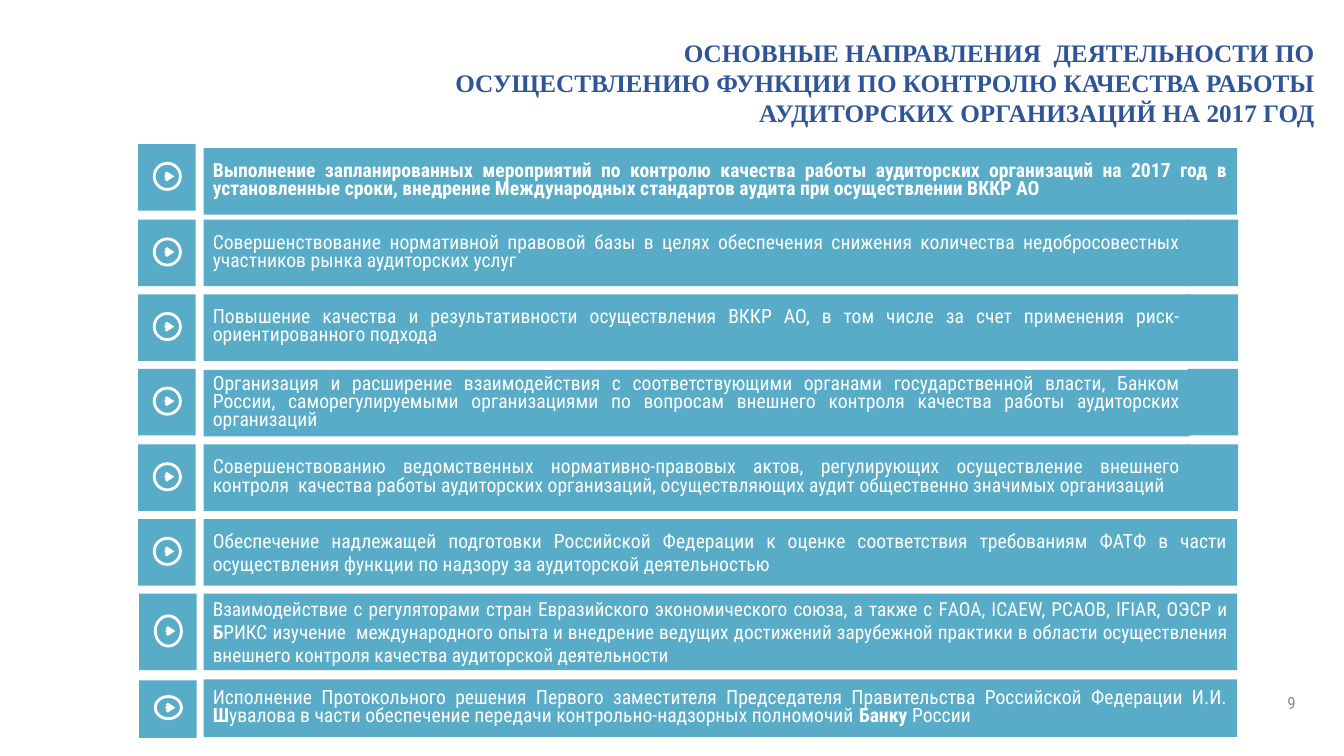
from lxml.etree import SubElement
from pptx import Presentation
from pptx.dml.color import RGBColor
from pptx.enum.shapes import MSO_CONNECTOR, MSO_SHAPE
from pptx.enum.text import MSO_ANCHOR, MSO_AUTO_SIZE, PP_ALIGN
from pptx.oxml.ns import qn
from pptx.util import Pt

PX = 9144  # 100 px to the inch
THEME = {
    "bar": RGBColor(0x58, 0xAC, 0xC8),
    "light": RGBColor(0xFF, 0xFF, 0xFF),
    "title": {"name": "Times New Roman", "size": Pt(18), "bold": True},
    "title_color": RGBColor(0x2F, 0x55, 0x97),
    "body": {"name": "Roboto Condensed", "size": Pt(14)},
    "dense": {"name": "Roboto Condensed", "size": Pt(13.8)},
    "number": {"name": "Roboto Condensed", "size": Pt(12)},
    "number_color": RGBColor(0x8C, 0x8C, 0x8C),
}
FRAME = {"word_wrap": True, "margin_left": 9 * PX, "margin_right": 9 * PX,
         "margin_top": 4 * PX, "margin_bottom": 4 * PX}


def add_block(shapes, kind, left, top, width, height, fill=None):
    """Add a preset shape: a filled one without outline, or a white outline."""
    block = shapes.add_shape(kind, left * PX, top * PX, width * PX, height * PX)
    block.shadow.inherit = False
    if fill is None:
        block.fill.background()
        block.line.color.rgb = THEME["light"]
        block.line.width = Pt(2)
    else:
        block.fill.solid()
        block.fill.fore_color.rgb = fill
        block.line.fill.background()
    return block


def write(box, spans, style, color, align, anchor, spacing=None):
    """Fill a box with one paragraph of (text, bold) spans."""
    frame = box.text_frame
    for name, value in {**FRAME, "vertical_anchor": anchor}.items():
        setattr(frame, name, value)
    para = frame.paragraphs[0]
    para.alignment = align
    if spacing:
        para.line_spacing = spacing
    for text, bold in spans:
        span = para.add_run()
        span.text = text
        for name, value in {"bold": bold, **style}.items():
            setattr(span.font, name, value)
        span.font.color.rgb = color


deck = Presentation()
deck.slide_width, deck.slide_height = 1333 * PX, 750 * PX
page = deck.slides.add_slide(deck.slide_layouts[5])

# Title
title = page.shapes.title
for name, value in {"left": 418, "top": 33, "width": 895, "height": 130}.items():
    setattr(title, name, value * PX)
write(title, [("ОСНОВНЫЕ НАПРАВЛЕНИЯ  ДЕЯТЕЛЬНОСТИ ПО ОСУЩЕСТВЛЕНИЮ ФУНКЦИИ ПО КОНТРОЛЮ "
               "КАЧЕСТВА РАБОТЫ АУДИТОРСКИХ ОРГАНИЗАЦИЙ НА 2017 ГОД", True)],
      THEME["title"], THEME["title_color"], PP_ALIGN.RIGHT, MSO_ANCHOR.TOP)
title.text_frame.auto_size = MSO_AUTO_SIZE.NONE

# Page number
number = page.shapes.add_textbox(1253 * PX, 678 * PX, 41 * PX, 39 * PX)
write(number, [("9", False)], THEME["number"], THEME["number_color"],
      PP_ALIGN.RIGHT, MSO_ANCHOR.MIDDLE)

# Directions: icon left, icon top, bar top, height, ring height, filler, style, spacing, spans
TIGHT = Pt(13)
BODY, DENSE = THEME["body"], THEME["dense"]
directions = [
    (137, 143, 147, 66, 26, False, BODY, TIGHT, [
        ("Выполнение запланированных мероприятий по контролю качества работы аудиторских "
         "организаций на 2017 год в установленные сроки, внедрение Международных стандартов "
         "аудита при осуществлении ВККР АО", True)]),
    (137, 218, 218, 66, 26, True, BODY, TIGHT, [
        ("Совершенствование нормативной правовой базы в целях обеспечения снижения количества "
         "недобросовестных участников рынка аудиторских услуг", False)]),
    (137, 292, 292, 66, 26, True, BODY, TIGHT, [
        ("Повышение качества и результативности осуществления ВККР АО, в том числе за счет "
         "применения риск-ориентированного подхода", False)]),
    (137, 366, 367, 66, 26, True, BODY, TIGHT, [
        ("Организация и расширение взаимодействия с соответствующими органами государственной "
         "власти, Банком России, саморегулируемыми организациями по вопросам внешнего контроля "
         "качества работы аудиторских организаций", False)]),
    (137, 441, 441, 66, 26, True, BODY, TIGHT, [
        ("Совершенствованию ведомственных нормативно-правовых актов, регулирующих осуществление "
         "внешнего контроля  качества работы аудиторских организаций, осуществляющих аудит "
         "общественно значимых организаций", False)]),
    (137, 515, 515, 66, 26, False, BODY, None, [
        ("Обеспечение надлежащей подготовки Российской Федерации к оценке соответствия "
         "требованиям ФАТФ в части осуществления функции по надзору за аудиторской "
         "деятельностью", False)]),
    (138, 589, 589, 76, 30, False, DENSE, None, [
        ("Взаимодействие с регуляторами стран Евразийского экономического союза, а также с "
         "FАOA, ICAEW, PCAOB, IFIAR, ОЭСР и ", False),
        ("Б", True),
        ("РИКС изучение  международного опыта и внедрение ведущих достижений зарубежной "
         "практики в области осуществления внешнего контроля качества аудиторской "
         "деятельности ", False)]),
    (138, 675, 674, 57, 22, False, BODY, TIGHT, [
        ("Исполнение Протокольного решения Первого заместителя Председателя Правительства "
         "Российской Федерации И.И. ", False),
        ("Ш", True),
        ("увалова в части обеспечение передачи контрольно-надзорных полномочий ", False),
        ("Банку ", True),
        ("России", False)]),
]

for left, icon_top, top, height, ring, filler, style, spacing, spans in directions:
    # Bar with text; a filler extends the narrower bars to the right edge
    bar = add_block(page.shapes, MSO_SHAPE.RECTANGLE, 202, top,
                    978 if filler else 1025, height, THEME["bar"])
    write(bar, spans, style, THEME["light"], PP_ALIGN.JUSTIFY, MSO_ANCHOR.MIDDLE, spacing)
    if filler:
        add_block(page.shapes, MSO_SHAPE.RECTANGLE, 1178, icon_top, 50, height, THEME["bar"])

    # Icon: square, arrow and ring
    icon = page.shapes.add_group_shape().shapes
    add_block(icon, MSO_SHAPE.RECTANGLE, left, icon_top, 57, height, THEME["bar"])
    middle = icon_top + height // 2 - 1
    arrow = icon.add_connector(MSO_CONNECTOR.STRAIGHT, (left + 31) * PX, middle * PX,
                               (left + 36) * PX, middle * PX)
    arrow.line.color.rgb = THEME["light"]
    arrow.line.width = Pt(2)
    SubElement(arrow.line._get_or_add_ln(), qn("a:tailEnd"), type="arrow")
    SubElement(arrow._element.spPr, qn("a:effectLst"))
    add_block(icon, MSO_SHAPE.OVAL, left + 16, middle - ring // 2, 26, ring)

deck.save("out.pptx")
